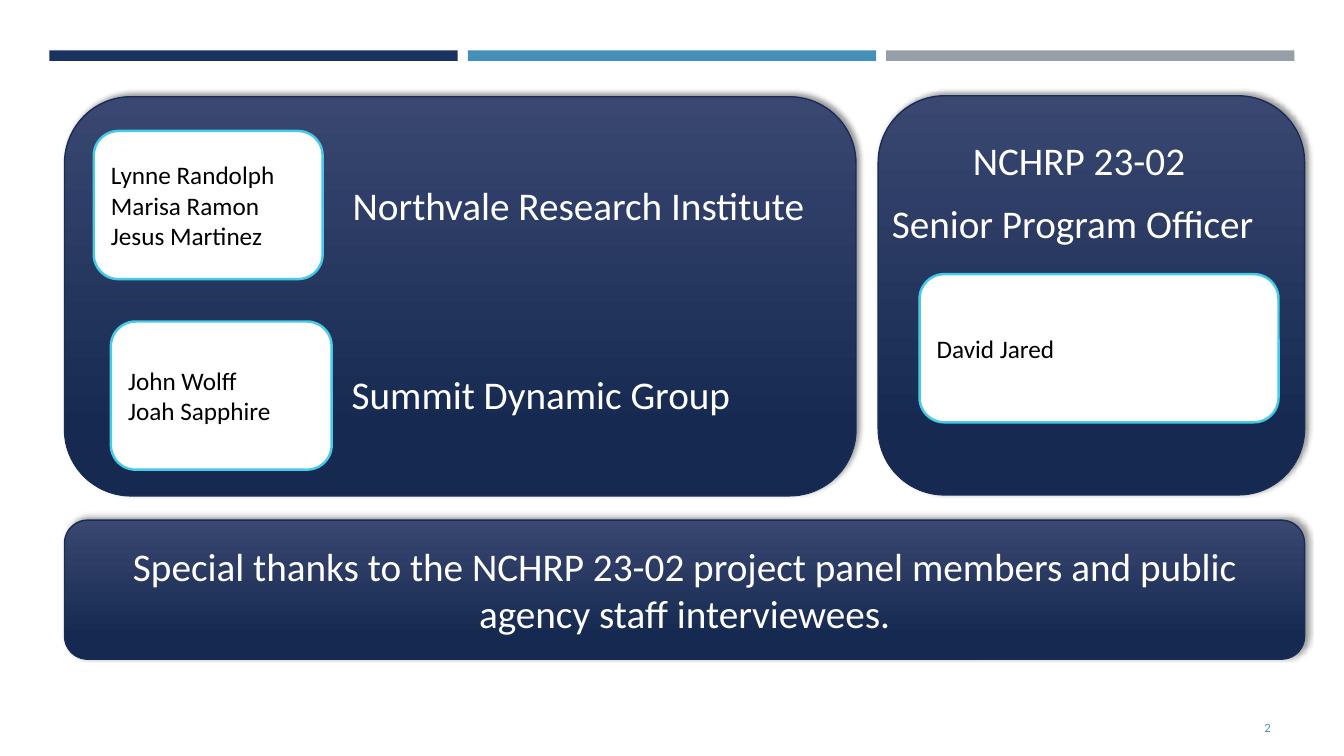
from lxml import etree
from pptx import Presentation
from pptx import util as u
from pptx.dml.color import RGBColor
from pptx.enum import shapes, text
from pptx.oxml import parse_xml
from pptx.oxml.ns import nsdecls

SLIDE_W, SLIDE_H = u.Inches(13.33), u.Inches(7.5)
FONT = "Calibri"
WHITE, BLACK = "FFFFFF", "000000"
NAVY, BLUE, GREY = "1A3260", "4590B8", "969FA7"
PANEL_TOP, PANEL_BOTTOM, PANEL_EDGE = "394771", "162A51", "172D56"
CARD_EDGE = "45CBE8"
CARD_H = 19.6
LEFT, CENTER, RIGHT = text.PP_ALIGN.LEFT, text.PP_ALIGN.CENTER, text.PP_ALIGN.RIGHT
TOP, MIDDLE = text.MSO_ANCHOR.TOP, text.MSO_ANCHOR.MIDDLE


def color(hex_code):
    return RGBColor.from_string(hex_code)


def place(left, top, width, height):
    return (int(SLIDE_W * left / 100), int(SLIDE_H * top / 100),
            int(SLIDE_W * width / 100), int(SLIDE_H * height / 100))


def write(holder, lines, size, hue, align=LEFT, anchor=TOP):
    frame = holder.text_frame
    frame.word_wrap = True
    frame.vertical_anchor = anchor
    frame.text = "\n".join(lines)
    for paragraph in frame.paragraphs:
        paragraph.alignment = align
        paragraph.font.name = FONT
        paragraph.font.size = u.Pt(size)
        paragraph.font.color.rgb = color(hue)


def add_block(slide, kind, area, fill=None, edge=None, edge_width=1):
    block = slide.shapes.add_shape(kind, *place(*area))
    block.shadow.inherit = False
    if fill:
        block.fill.solid()
        block.fill.fore_color.rgb = color(fill)
    if edge:
        block.line.color.rgb = color(edge)
        block.line.width = u.Pt(edge_width)
    else:
        block.line.fill.background()
    return block


def add_panel(slide, area):
    panel = add_block(slide, shapes.MSO_SHAPE.ROUNDED_RECTANGLE, area, edge=PANEL_EDGE)
    panel.fill.gradient()
    panel.fill.gradient_angle = 270
    stops = ((0, PANEL_TOP), (0.84, PANEL_BOTTOM))
    for stop, (position, hue) in zip(panel.fill.gradient_stops, stops):
        stop.position = position
        stop.color.rgb = color(hue)
    effects = panel.element.spPr.find("{*}effectLst")
    effects.append(parse_xml(
        f'<a:outerShdw {nsdecls("a")} blurRad="{u.Pt(4)}" dist="{u.Pt(3)}" '
        f'dir="{315 * 60000}" rotWithShape="0">'
        f'<a:srgbClr val="{BLACK}"><a:alpha val="40000"/></a:srgbClr></a:outerShdw>'))
    return panel


def add_card(slide, left, top, width, people):
    card = add_block(slide, shapes.MSO_SHAPE.ROUNDED_RECTANGLE,
                     (left, top, width, CARD_H), WHITE, CARD_EDGE, 1.75)
    write(card, people, 18, BLACK, anchor=MIDDLE)


def add_label(slide, area, lines, size=28, hue=WHITE, align=LEFT, anchor=TOP):
    label = slide.shapes.add_textbox(*place(*area))
    write(label, lines, size, hue, align, anchor)
    return label


def main():
    deck = Presentation()
    deck.slide_width, deck.slide_height = SLIDE_W, SLIDE_H
    slide = deck.slides.add_slide(deck.slide_layouts[6])

    for column, hue in enumerate((NAVY, BLUE, GREY)):
        add_block(slide, shapes.MSO_SHAPE.RECTANGLE,
                  (3.68 + 31.13 * column, 6.67, 30.38, 1.4), hue)

    add_panel(slide, (4.8, 12.8, 58.89, 52.8))
    add_card(slide, 6.98, 17.33, 17.03,
             ["Lynne Randolph", "Marisa Ramon", "Jesus Martinez"])
    add_card(slide, 8.25, 42.53, 16.43, ["John Wolff", "Joah Sapphire"])
    add_label(slide, (25.51, 23.33, 37.51, 7.6), ["Northvale Research Institute"])
    add_label(slide, (25.43, 48.27, 34.88, 7.6), ["Summit Dynamic Group"])

    add_panel(slide, (65.34, 12.67, 31.73, 52.8))
    officer = add_label(slide, (64.37, 17.33, 31.81, 16.67),
                        ["NCHRP 23-02", "Senior Program Officer"], align=CENTER)
    spacer = officer.text_frame.paragraphs[1].add_run()
    spacer.text = " "
    spacer.font.size = u.Pt(40)
    add_card(slide, 68.42, 36.27, 26.71, ["David Jared"])

    thanks = add_panel(slide, (4.8, 68.8, 92.27, 18.4))
    write(thanks, ["Special thanks to the NCHRP 23-02 project panel members "
                   "and public agency staff interviewees."],
          28, WHITE, CENTER, MIDDLE)

    add_label(slide, (86.65, 93.6, 8.63, 5.33), ["2"], 9, BLUE, RIGHT, MIDDLE)
    deck.save("out.pptx")


if __name__ == "__main__":
    main()
